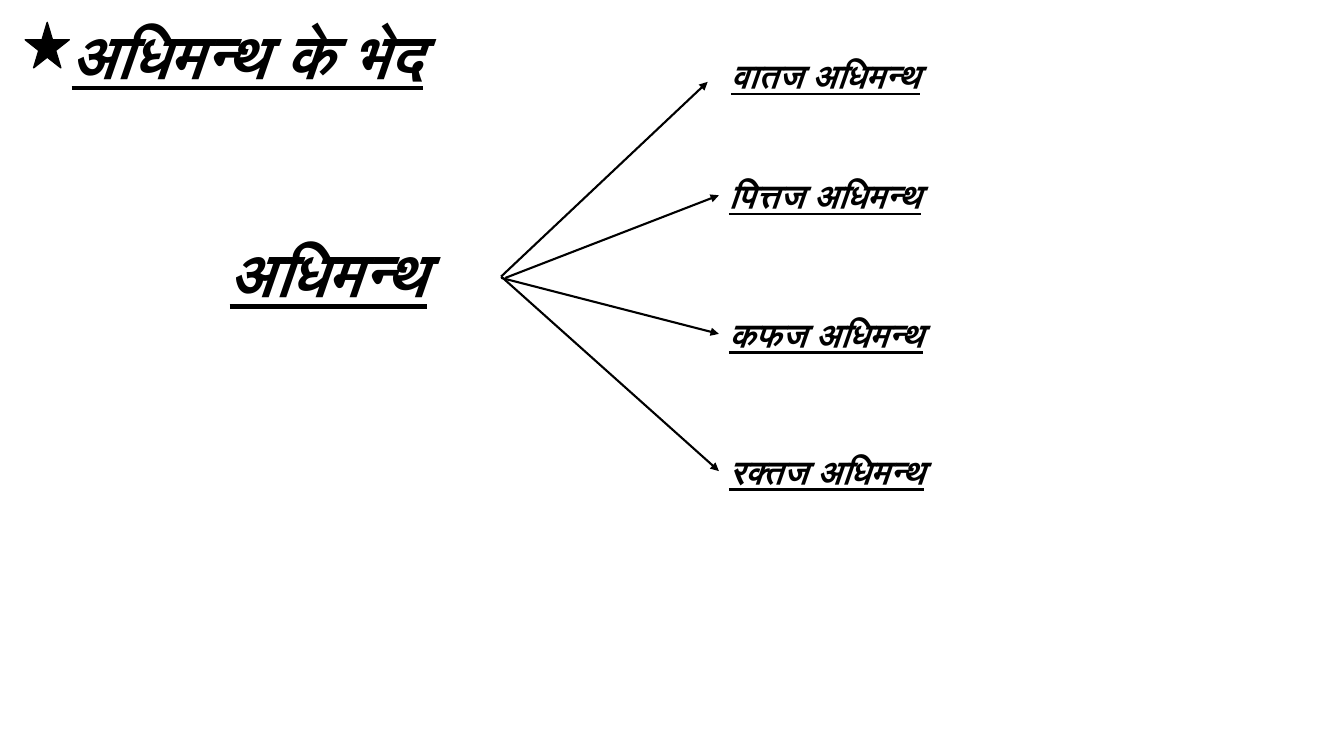
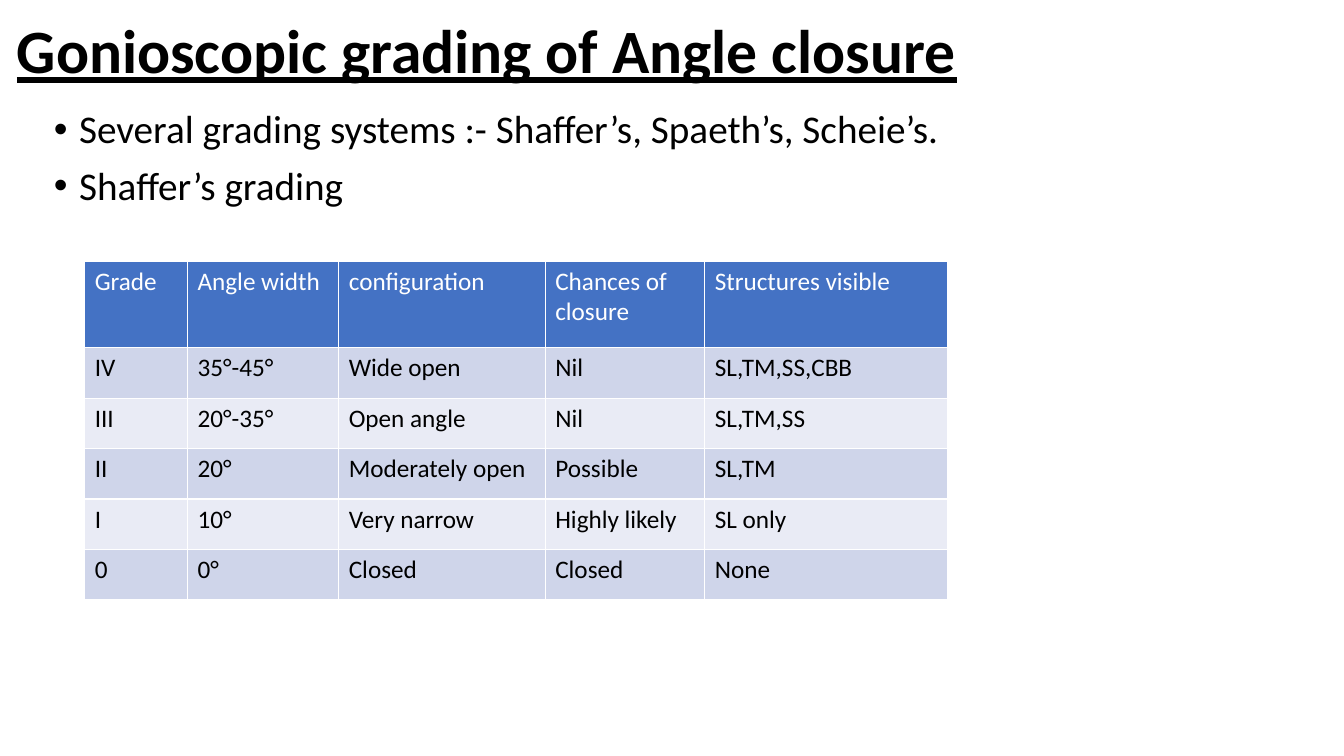
from lxml import etree
from pptx import Presentation
from pptx.dml.color import RGBColor
from pptx.enum import shapes, text
from pptx.oxml import ns
from pptx.util import Pt

COLORS = {
    "ink": "000000",
    "paper": "FFFFFF",
    "header": "4472C4",
    "band_dark": "CFD5EA",
    "band_light": "E9EBF5",
}
FONT = "Calibri"
HEADING_SIZE, LABEL_SIZE, BULLET_SIZE, CELL_SIZE = 44, 24, 28, 18
LABEL_LEFT, LABEL_HEIGHT = 513.5, 36

# Label, left, top, width, start of its arrow
TYPES = [
    ("वातज अधिमन्थ", 515, 36, 186, (358, 197.5)),
    ("पित्तज अधिमन्थ", LABEL_LEFT, 121.5, 268, (361, 198.5)),
    ("कफज अधिमन्थ", LABEL_LEFT, 220.5, 214, (358, 198.5)),
    ("रक्तज अधिमन्थ", LABEL_LEFT, 318.5, 272, (358, 197.5)),
]
FIRST_ARROW_TIP = (505.5, 58.5)

SYSTEMS = [
    "Several grading systems :- Shaffer’s, Spaeth’s, Scheie’s.",
    "Shaffer’s grading",
]
GRADES = [
    ("Grade", "Angle width", "configuration", "Chances of closure", "Structures visible"),
    ("IV", "35°-45°", "Wide open", "Nil", "SL,TM,SS,CBB"),
    ("III", "20°-35°", "Open angle", "Nil", "SL,TM,SS"),
    ("II", "20°", "Moderately open", "Possible", "SL,TM"),
    ("I", "10°", "Very narrow", "Highly likely", "SL only"),
    ("0", "0°", "Closed", "Closed", "None"),
]
COLUMN_WIDTHS = [73.5, 108, 147.5, 114, 173.5]
HEADER_HEIGHT, ROW_HEIGHT = 62, 36


def rgb(name):
    return RGBColor.from_string(COLORS[name])


def sub(parent, tag, **attributes):
    return etree.SubElement(parent, ns.qn(tag), **attributes)


def format_runs(paragraph, size, color="ink", bold=None, italic=None, underline=None):
    for run in paragraph.runs:
        font = run.font
        font.name, font.size = FONT, Pt(size)
        font.bold, font.italic, font.underline = bold, italic, underline
        font.color.rgb = rgb(color)


def add_text(slide, lines, left, top, width, height, size, spacing=None, **style):
    box = slide.shapes.add_textbox(Pt(left), Pt(top), Pt(width), Pt(height))
    frame = box.text_frame
    frame.word_wrap = True
    frame.text = "\n".join(lines)
    for paragraph in frame.paragraphs:
        paragraph.line_spacing = spacing
        format_runs(paragraph, size, **style)
    return box


def add_heading(slide, heading, left, top, width, height, italic=None):
    return add_text(slide, [heading], left, top, width, height, HEADING_SIZE,
                    spacing=0.9, bold=True, italic=italic, underline=True)


def add_bullets(slide, lines, left, top, width, height):
    box = add_text(slide, lines, left, top, width, height, BULLET_SIZE, spacing=0.9)
    for paragraph in box.text_frame.paragraphs:
        paragraph.space_before = Pt(10)
        properties = paragraph._p.get_or_add_pPr()
        properties.set("marL", str(Pt(18)))
        properties.set("indent", str(-Pt(18)))
        sub(properties, "a:buFont", typeface="Arial")
        sub(properties, "a:buChar", char="•")


def add_arrow(slide, start, tip, target=None):
    arrow = slide.shapes.add_connector(
        shapes.MSO_CONNECTOR.STRAIGHT, *(Pt(value) for value in (*start, *tip)))
    if target is not None:
        arrow.end_connect(target, 1)
    arrow.line.color.rgb = rgb("ink")
    arrow.line.width = Pt(1.5)
    sub(arrow.line._get_or_add_ln(), "a:tailEnd", type="triangle")
    sub(arrow._element.spPr, "a:effectLst")


def add_star(slide, left, top, width, height):
    star = slide.shapes.add_shape(shapes.MSO_SHAPE.STAR_5_POINT,
                                  Pt(left), Pt(top), Pt(width), Pt(height))
    star.shadow.inherit = False
    star.fill.solid()
    star.fill.fore_color.rgb = rgb("ink")
    star.line.color.rgb = rgb("ink")
    star.line.width = Pt(1)


def style_cell(cell, fill, color):
    # Borders come before the fill in the cell properties
    properties = cell._tc.get_or_add_tcPr()
    for side in ("a:lnL", "a:lnR", "a:lnT", "a:lnB"):
        border = sub(properties, side, w=str(Pt(1)))
        sub(sub(border, "a:solidFill"), "a:srgbClr", val=COLORS["paper"])
    cell.fill.solid()
    cell.fill.fore_color.rgb = rgb(fill)
    format_runs(cell.text_frame.paragraphs[0], CELL_SIZE, color)


def add_grade_table(slide, left, top):
    heights = [HEADER_HEIGHT] + [ROW_HEIGHT] * (len(GRADES) - 1)
    table = slide.shapes.add_table(
        len(GRADES), len(COLUMN_WIDTHS), Pt(left), Pt(top),
        Pt(sum(COLUMN_WIDTHS)), Pt(sum(heights))).table
    table.first_row = True
    table.horz_banding = False
    for column, width in zip(table.columns, COLUMN_WIDTHS):
        column.width = Pt(width)
    for index, (row, height, values) in enumerate(zip(table.rows, heights, GRADES)):
        row.height = Pt(height)
        if index == 0:
            fill, color = "header", "paper"
        else:
            fill, color = ("band_dark" if index % 2 else "band_light"), "ink"
        for cell, value in zip(row.cells, values):
            cell.text_frame.text = value
            style_cell(cell, fill, color)


def add_slide(deck):
    slide = deck.slides.add_slide(deck.slide_layouts[6])
    slide.background.fill.solid()
    slide.background.fill.fore_color.rgb = rgb("paper")
    return slide


def build_types(deck):
    slide = add_slide(deck)
    add_heading(slide, "अधिमन्थ", 157, 170.5, 193, 57, italic=True)
    for index, (label, left, top, width, start) in enumerate(TYPES):
        target = add_text(slide, [label], left, top, width, LABEL_HEIGHT, LABEL_SIZE,
                          bold=True, italic=True, underline=True)
        # The first arrow stops short of its label
        if index == 0:
            add_arrow(slide, start, FIRST_ARROW_TIP)
        else:
            add_arrow(slide, start, (left, top + LABEL_HEIGHT / 2), target)
    add_heading(slide, "अधिमन्थ के भेद", 44, 14.5, 356.5, 57, italic=True)
    add_star(slide, 18, 16, 31.5, 32.5)


def build_grading(deck):
    slide = add_slide(deck)
    title = add_heading(slide, "Gonioscopic grading of Angle closure", 5, 2, 728, 73)
    title.text_frame.vertical_anchor = text.MSO_ANCHOR.MIDDLE
    add_bullets(slide, SYSTEMS, 31.5, 75, 648, 283)
    add_grade_table(slide, 60.5, 186.5)


def main():
    deck = Presentation()
    deck.slide_width, deck.slide_height = Pt(960), Pt(540)
    build_types(deck)
    build_grading(deck)
    deck.save("out.pptx")


if __name__ == "__main__":
    main()
